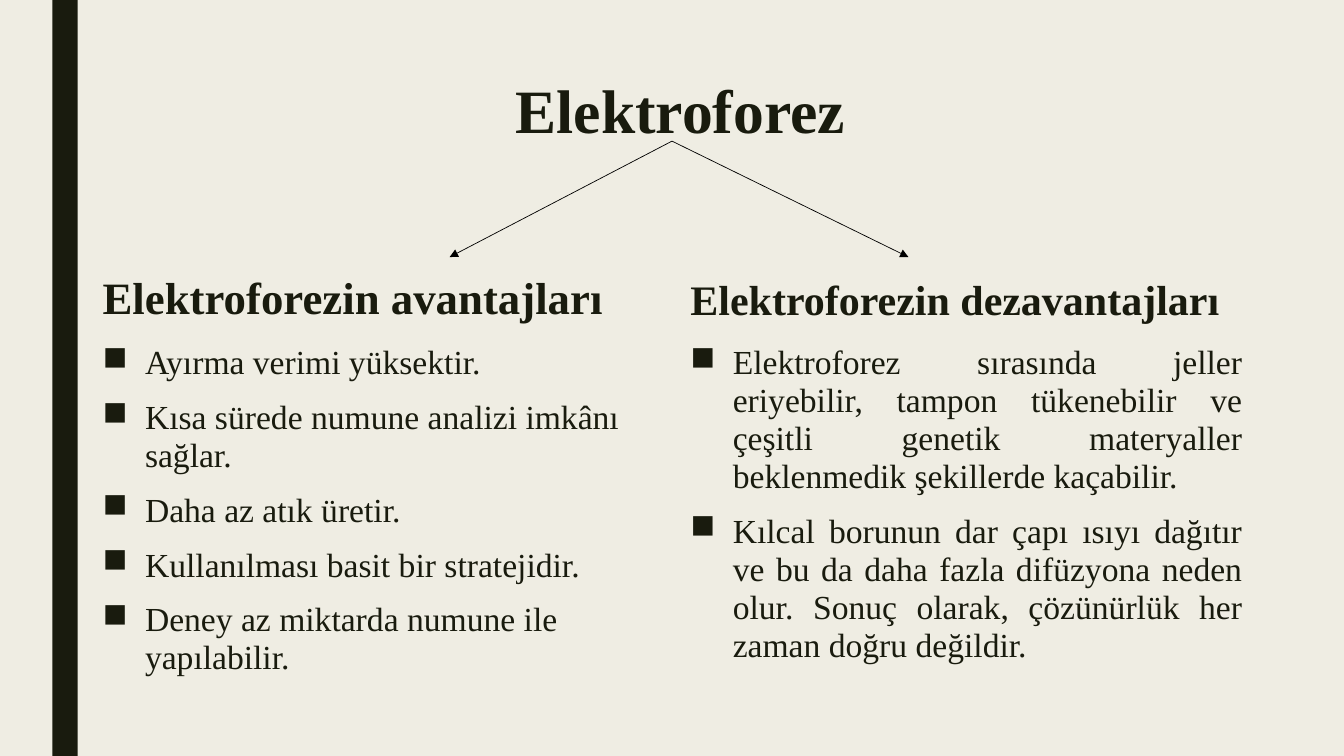
from lxml import etree
from pptx import Presentation
from pptx.dml.color import RGBColor
from pptx.enum.shapes import MSO_CONNECTOR, MSO_SHAPE
from pptx.enum.text import MSO_ANCHOR, MSO_AUTO_SIZE, PP_ALIGN
from pptx.oxml.ns import qn
from pptx.util import Inches, Pt

LEFT, CENTER, JUSTIFY = PP_ALIGN.LEFT, PP_ALIGN.CENTER, PP_ALIGN.JUSTIFY
TOP, BOTTOM = MSO_ANCHOR.TOP, MSO_ANCHOR.BOTTOM
NO_FIT = MSO_AUTO_SIZE.NONE
RECTANGLE = MSO_SHAPE.RECTANGLE
STRAIGHT = MSO_CONNECTOR.STRAIGHT

COLORS = {"page": "EFEDE3", "ink": "191B0E", "arrow": "000000"}
FONT = "Times New Roman"
PAGE_WIDTH, PAGE_HEIGHT = 13.33, 7.5
HEADING_TOP, HEADING_HEIGHT = 1.84, 1.42
LIST_TOP = 3.37
BULLET_INDENT = 0.42
FORK = (PAGE_WIDTH / 2, 1.4)
ARROW_ENDS = [(4.46, 2.55), (9.01, 2.55)]

# left, width, list height, heading, heading size, list alignment, items
COLUMNS = [
    (0.92, 5.64, 3.89, "Elektroforezin avantajları", 32, LEFT, [
        "Ayırma verimi yüksektir.",
        "Kısa sürede numune analizi imkânı sağlar.",
        "Daha az atık üretir.",
        "Kullanılması basit bir stratejidir.",
        "Deney az miktarda numune ile yapılabilir.",
    ]),
    (6.75, 5.67, 3.4, "Elektroforezin dezavantajları", 30, JUSTIFY, [
        "Elektroforez sırasında jeller eriyebilir, tampon tükenebilir ve "
        "çeşitli genetik materyaller beklenmedik şekillerde kaçabilir.",
        "Kılcal borunun dar çapı ısıyı dağıtır ve bu da daha fazla difüzyona "
        "neden olur. Sonuç olarak, çözünürlük her zaman doğru değildir.",
    ]),
]


def color(name):
    return RGBColor.from_string(COLORS[name])


def inches(*lengths):
    return [Inches(length) for length in lengths]


def fill_text(box, lines, size, spacing, align=LEFT, bold=False, anchor=TOP):
    """Write one paragraph per line and return the paragraphs."""
    frame = box.text_frame
    frame.word_wrap = True
    frame.auto_size = NO_FIT
    frame.vertical_anchor = anchor
    frame.text = "\n".join(lines)
    for para in frame.paragraphs:
        para.alignment = align
        para.line_spacing = spacing
        para.font.name = FONT
        para.font.size = Pt(size)
        para.font.bold = bold
        para.font.color.rgb = color("ink")
    return frame.paragraphs


def add_bullet(para):
    para.space_before, para.space_after = Pt(10), Pt(2)
    properties = para._p.get_or_add_pPr()
    properties.set("marL", str(Inches(BULLET_INDENT)))
    properties.set("indent", str(-Inches(BULLET_INDENT)))
    bullet = etree.Element(qn("a:buChar"), char="■")
    properties.find(qn("a:defRPr")).addprevious(bullet)


def add_sidebar(page):
    bar = page.shapes.add_shape(RECTANGLE, *inches(0.52, 0, 0.25, PAGE_HEIGHT))
    bar.shadow.inherit = False
    bar.fill.solid()
    bar.fill.fore_color.rgb = color("ink")
    bar.line.fill.background()


def add_title(page, text):
    title = page.shapes.title
    title.left, title.top, title.width, title.height = inches(1.5, 0.75, 10.5, 1.62)
    fill_text(title, [text], 44, 0.89, CENTER, bold=True)


def add_column(page, left, width, list_height, heading, size, align, items):
    heading_box = page.shapes.add_textbox(
        *inches(left, HEADING_TOP, width, HEADING_HEIGHT))
    fill_text(heading_box, [heading], size, 0.84, bold=True, anchor=BOTTOM)
    list_box = page.shapes.add_textbox(*inches(left, LIST_TOP, width, list_height))
    for para in fill_text(list_box, items, 24, 0.94, align):
        add_bullet(para)


def add_arrow(page, start, end):
    arrow = page.shapes.add_connector(STRAIGHT, *inches(*start, *end))
    arrow.line.color.rgb = color("arrow")
    arrow.line.width = Pt(0.5)
    etree.SubElement(arrow.line._get_or_add_ln(), qn("a:tailEnd"), type="triangle")
    etree.SubElement(arrow._element.spPr, qn("a:effectLst"))


def main():
    deck = Presentation()
    deck.slide_width, deck.slide_height = inches(PAGE_WIDTH, PAGE_HEIGHT)
    page = deck.slides.add_slide(deck.slide_layouts.get_by_name("Title Only"))
    page.background.fill.solid()
    page.background.fill.fore_color.rgb = color("page")
    add_sidebar(page)
    add_title(page, "Elektroforez")
    for column in COLUMNS:
        add_column(page, *column)
    for end in ARROW_ENDS:
        add_arrow(page, FORK, end)
    deck.save("out.pptx")


if __name__ == "__main__":
    main()
